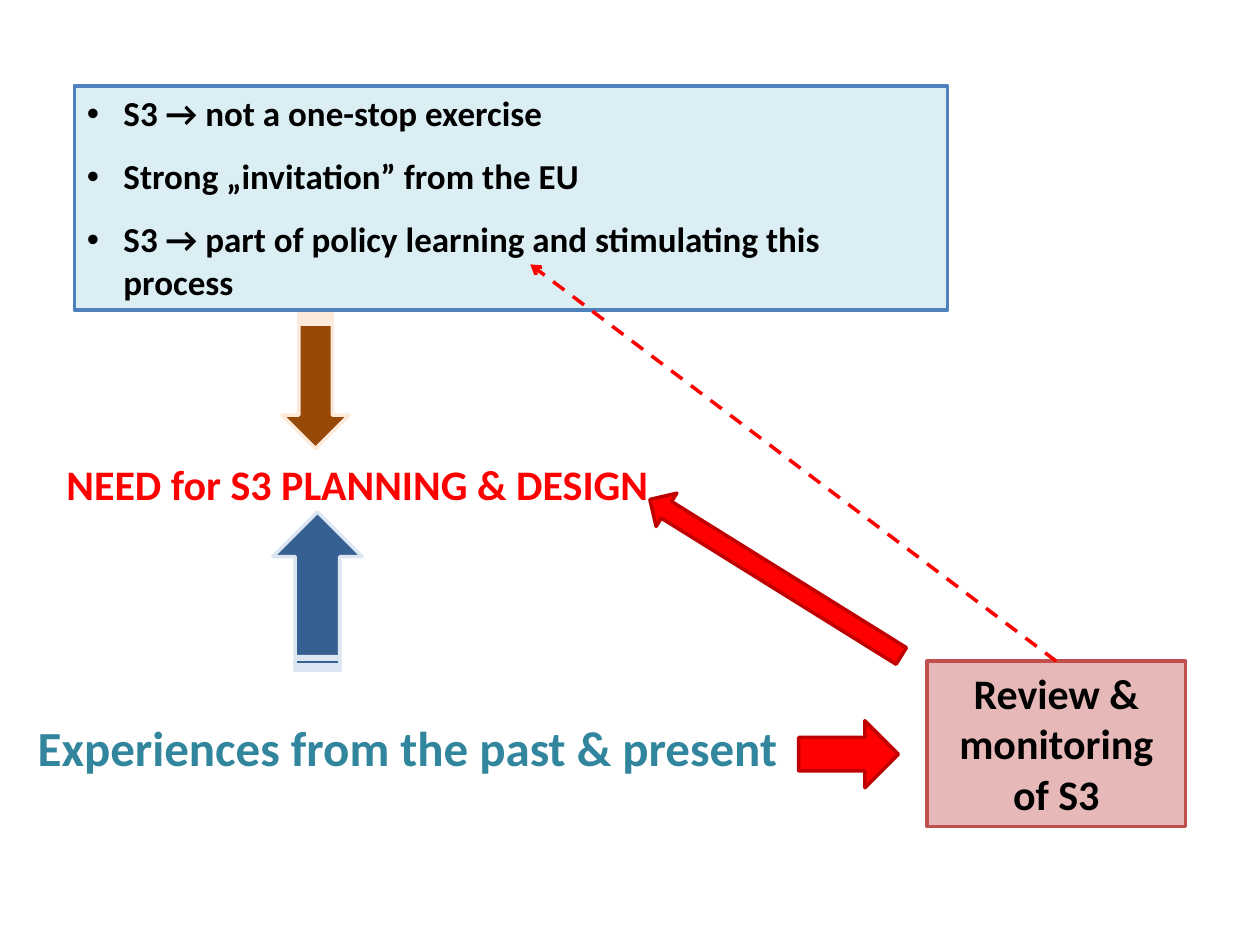
"""Build the slide on why S3 planning and design is needed."""
from dataclasses import dataclass

from lxml import etree
from pptx import Presentation
from pptx.dml.color import RGBColor
from pptx.enum.dml import MSO_LINE
from pptx.enum.shapes import MSO_CONNECTOR, MSO_SHAPE
from pptx.enum.text import MSO_ANCHOR, MSO_AUTO_SIZE, PP_ALIGN
from pptx.oxml.ns import qn
from pptx.util import Cm, Pt

RECTANGLE = MSO_SHAPE.RECTANGLE
STRIPED = MSO_SHAPE.STRIPED_RIGHT_ARROW
ARROW = MSO_SHAPE.RIGHT_ARROW
STRAIGHT = MSO_CONNECTOR.STRAIGHT
DASH = MSO_LINE.DASH
TOP = MSO_ANCHOR.TOP
FIT = MSO_AUTO_SIZE.SHAPE_TO_FIT_TEXT
LEFT, CENTER = PP_ALIGN.LEFT, PP_ALIGN.CENTER


@dataclass(frozen=True)
class Theme:
    font: str = "Calibri"
    small: int = 20
    medium: int = 24
    large: int = 28
    line_width: int = 2
    black: str = "000000"
    red: str = "FF0000"
    dark_red: str = "C00000"
    teal: str = "31859C"
    pale_blue: str = "DBEEF4"
    blue: str = "4F81BD"
    pink: str = "E6B9B8"
    brick: str = "C0504D"
    brown: str = "984807"
    cream: str = "FDEADA"
    navy: str = "376092"
    mist: str = "DCE6F2"


THEME = Theme()

REASONS = [
    "S3 → not a one-stop exercise",
    "Strong „invitation” from the EU",
    "S3 → part of policy learning and stimulating this process",
]
NEED = "NEED for S3 PLANNING & DESIGN"
EXPERIENCES = "Experiences from the past & present"
REVIEW = "Review & monitoring of S3"

REASONS_AREA = (1.5, 1.73, 17.6, 4.52)
NEED_AREA = (1.09, 9.12, 12.34, 1.27)
EXPERIENCES_AREA = (0.51, 14.33, 15.6, 1.45)
REVIEW_AREA = (18.69, 13.33, 5.21, 3.33)
ARROWS = [
    (STRIPED, (5, 7.01, 2.72, 1.35), 90, THEME.brown, THEME.cream),
    (STRIPED, (4.8, 11.02, 3.2, 1.8), 270, THEME.navy, THEME.mist),
    (ARROW, (16.1, 14.53, 2.01, 1.35), 0, THEME.red, THEME.dark_red),
    (ARROW, (12.65, 11.25, 5.97, 0.79), 211.9, THEME.red, THEME.dark_red),
]
FEEDBACK_END = (10.69, 5.33)


def lengths(values):
    return [Cm(value) for value in values]


def style_line(line, color):
    line.color.rgb = RGBColor.from_string(color)
    line.width = Pt(THEME.line_width)


def add_outlined(slide, kind, area, fill, outline, rotation=0):
    shape = slide.shapes.add_shape(kind, *lengths(area))
    shape.shadow.inherit = False
    shape.fill.solid()
    shape.fill.fore_color.rgb = RGBColor.from_string(fill)
    style_line(shape.line, outline)
    shape.rotation = rotation
    return shape


def add_bullet(paragraph):
    properties = paragraph._p.get_or_add_pPr()
    properties.set("marL", str(Cm(0.74)))
    properties.set("indent", str(-Cm(0.74)))
    etree.SubElement(properties, qn("a:buFont"), typeface="Arial")
    etree.SubElement(properties, qn("a:buChar"), char="•")


def write_text(shape, lines, size, color=THEME.black, align=LEFT, wrap=True,
               bullets=False, space_after=0):
    frame = shape.text_frame
    frame.word_wrap = wrap
    frame.auto_size = FIT
    frame.vertical_anchor = TOP
    frame.text = "\n".join(lines)
    for paragraph in frame.paragraphs:
        paragraph.alignment = align
        paragraph.space_after = Pt(space_after)
        if bullets:
            add_bullet(paragraph)
        font = paragraph.runs[0].font
        font.name, font.size, font.bold = THEME.font, Pt(size), True
        font.color.rgb = RGBColor.from_string(color)


def add_feedback_line(slide, start, end):
    connector = slide.shapes.add_connector(STRAIGHT, *lengths(start + end))
    style_line(connector.line, THEME.red)
    connector.line.dash_style = DASH
    outline = connector.line._get_or_add_ln()
    etree.SubElement(outline, qn("a:tailEnd"), type="arrow")
    etree.SubElement(connector._element.spPr, qn("a:effectLst"))


def main():
    presentation = Presentation()
    presentation.slide_width, presentation.slide_height = Cm(25.4), Cm(19.05)
    slide = presentation.slides.add_slide(presentation.slide_layouts[6])

    reasons = add_outlined(slide, RECTANGLE, REASONS_AREA, THEME.pale_blue, THEME.blue)
    write_text(reasons, REASONS, THEME.small, bullets=True, space_after=12)
    need = slide.shapes.add_textbox(*lengths(NEED_AREA))
    write_text(need, [NEED], THEME.medium, color=THEME.red, wrap=False)
    experiences = slide.shapes.add_textbox(*lengths(EXPERIENCES_AREA))
    write_text(experiences, [EXPERIENCES], THEME.large, color=THEME.teal, wrap=False)
    review = add_outlined(slide, RECTANGLE, REVIEW_AREA, THEME.pink, THEME.brick)
    write_text(review, [REVIEW], THEME.medium, align=CENTER)

    for kind, area, rotation, fill, outline in ARROWS:
        add_outlined(slide, kind, area, fill, outline, rotation)
    left, top, width, _ = REVIEW_AREA
    add_feedback_line(slide, (left + width / 2, top), FEEDBACK_END)

    presentation.save("out.pptx")


if __name__ == "__main__":
    main()
